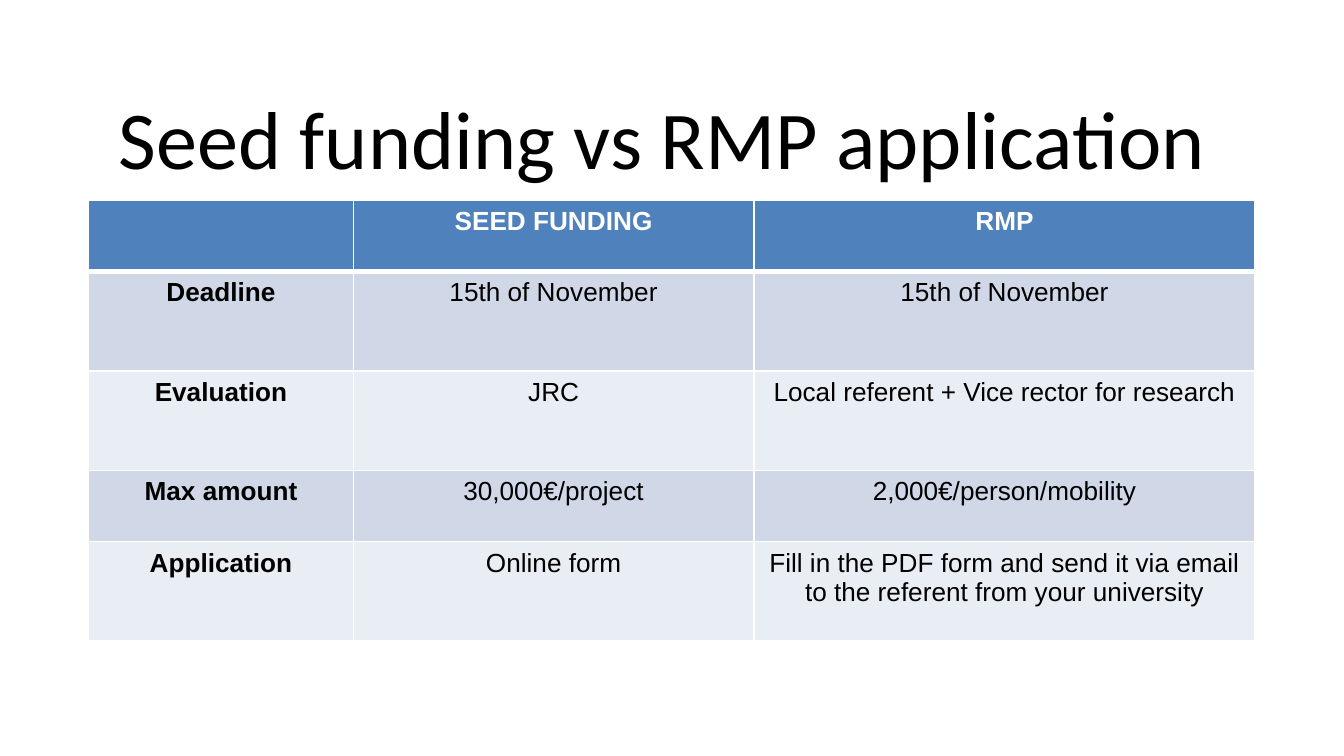
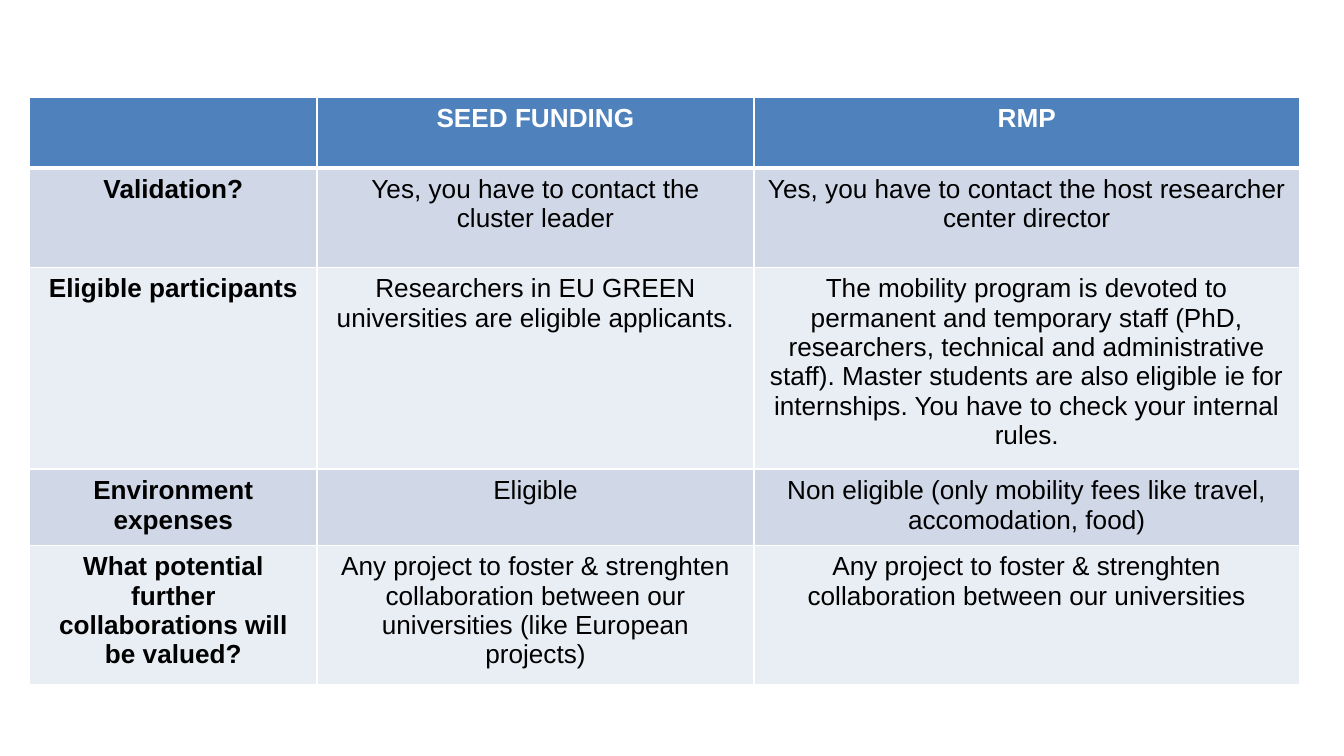
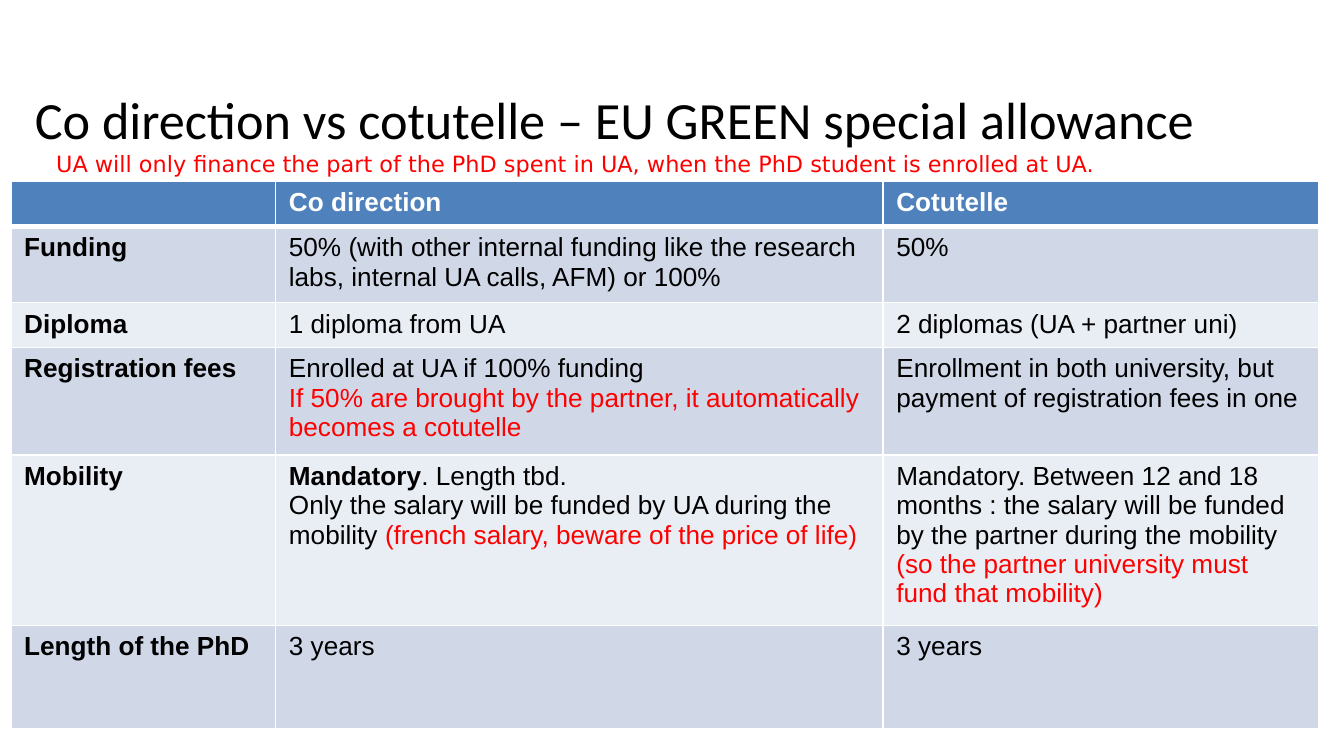
from dataclasses import dataclass
from typing import NamedTuple, Optional

from lxml.etree import SubElement
from pptx import Presentation
from pptx.dml.color import RGBColor
from pptx.enum.text import MSO_ANCHOR, PP_ALIGN
from pptx.oxml.ns import qn
from pptx.util import Emu, Pt

PX = 9144  # EMU in one px, at 100 px to the inch
PAGE_WIDTH = Emu(1000 * PX)
PAGE_HEIGHT = Emu(PAGE_WIDTH * 9 // 16)


@dataclass(frozen=True)
class Theme:
    black: str = "000000"
    white: str = "FFFFFF"
    red: str = "FF0000"
    header: str = "4F81BD"
    bands: tuple = ("D0D8E8", "E9EDF4")
    title_font: str = "Calibri"
    table_font: str = "Arial"
    note_font: str = "DejaVu Sans"
    title_size: int = 44
    small_title_size: int = 28
    table_size: int = 14
    note_size: int = 12
    rule: int = 1
    header_rule: int = 3


THEME = Theme()


class Box(NamedTuple):
    left: int
    top: int
    width: int
    height: int

    def emu(self):
        return [Emu(length * PX) for length in self]


class Span(NamedTuple):
    text: str
    color: Optional[str] = None
    bold: Optional[bool] = None


def write(frame, content, *, font, size, color=THEME.black, bold=False, align=PP_ALIGN.LEFT):
    """Content is a string, or a list of paragraphs that are strings or lists of Spans."""
    paragraphs = [content] if isinstance(content, str) else content
    for index, spans in enumerate(paragraphs):
        para = frame.add_paragraph() if index else frame.paragraphs[0]
        para.alignment = align
        para.line_spacing = 1.0
        if not spans:
            SubElement(para._p, qn("a:endParaRPr"), sz=str(size * 100))
            continue
        for span in [Span(spans)] if isinstance(spans, str) else spans:
            run = para.add_run()
            run.text = span.text
            run.font.name = font
            run.font.size = Pt(size)
            run.font.bold = bold if span.bold is None else span.bold
            run.font.color.rgb = RGBColor.from_string(span.color or color)


def add_text(page, box, content, anchor=MSO_ANCHOR.TOP, **style):
    frame = page.shapes.add_textbox(*box.emu()).text_frame
    frame.word_wrap = True
    frame.vertical_anchor = anchor
    write(frame, content, **style)


def add_title(page, box, text, size=THEME.title_size):
    add_text(page, box, text, MSO_ANCHOR.MIDDLE, font=THEME.title_font, size=size,
             align=PP_ALIGN.CENTER)


def add_borders(cell, top, bottom):
    """Border lines come before the fill in the cell properties."""
    properties = cell._tc.get_or_add_tcPr()
    widths = {"a:lnL": THEME.rule, "a:lnR": THEME.rule, "a:lnT": top, "a:lnB": bottom}
    for position, (tag, width) in enumerate(widths.items()):
        line = SubElement(properties, qn(tag), w=str(Pt(width)))
        fill = SubElement(line, qn("a:solidFill"))
        SubElement(fill, qn("a:srgbClr"), val=THEME.white)
        properties.insert(position, line)


def add_comparison(page, box, columns, heights, rows, align=PP_ALIGN.CENTER):
    """Header row, then banded rows with a bold label in the first column."""
    holder = page.shapes.add_table(len(rows), len(columns), *box.emu())
    table = holder.table
    for column, width in zip(table.columns, columns):
        column.width = Emu(width * PX)
    for row, height in zip(table.rows, heights):
        row.height = Emu(height * PX)
    holder.height = Emu(box.height * PX)

    for r, row in enumerate(rows):
        is_header = r == 0
        for c, content in enumerate(row):
            cell = table.cell(r, c)
            cell.fill.solid()
            cell.fill.fore_color.rgb = RGBColor.from_string(
                THEME.header if is_header else THEME.bands[(r - 1) % 2])
            add_borders(cell,
                        top=THEME.header_rule if r == 1 else THEME.rule,
                        bottom=THEME.header_rule if is_header else THEME.rule)
            write(cell.text_frame, content, font=THEME.table_font, size=THEME.table_size,
                  color=THEME.white if is_header else THEME.black,
                  bold=is_header or c == 0, align=align)


# Content of the three tables
FUNDING_HEADER = ("", "SEED FUNDING", "RMP")
FUNDING_HEIGHTS = (53, 74, 74, 53, 74)

APPLICATION_ROWS = [
    FUNDING_HEADER,
    ("Deadline", "15th of November", "15th of November"),
    ("Evaluation", "JRC", "Local referent + Vice rector for research"),
    ("Max amount", "30,000€/project", "2,000€/person/mobility"),
    ("Application", "Online form",
     "Fill in the PDF form and send it via email to the referent from your university"),
]

ELIGIBILITY_ROWS = [
    FUNDING_HEADER,
    ("Validation?", "Yes, you have to contact the cluster leader",
     "Yes, you have to contact the host researcher center director"),
    ("Eligible participants", "Researchers in EU GREEN universities are eligible applicants.",
     "The mobility program is devoted to permanent and temporary staff (PhD, researchers, "
     "technical and administrative staff). Master students are also eligible ie for "
     "internships. You have to check your internal rules."),
    ("Environment expenses", "Eligible",
     "Non eligible (only mobility fees like travel, accomodation, food)"),
    ("What potential further collaborations will be valued?",
     "Any project to foster & strenghten collaboration between our universities "
     "(like European projects)",
     "Any project to foster & strenghten collaboration between our universities"),
]

DOCTORATE_ROWS = [
    ("", "Co direction", "Cotutelle"),
    ("Funding",
     "50% (with other internal funding like the research labs, internal UA calls, AFM) or 100%",
     "50%"),
    ("Diploma", "1 diploma from UA", "2 diplomas (UA + partner uni)"),
    ("Registration fees",
     ["Enrolled at UA if 100% funding",
      [Span("If 50% are brought by the partner, it automatically becomes a cotutelle",
            THEME.red)]],
     "Enrollment in both university, but payment of registration fees in one"),
    ("Mobility",
     [[Span("Mandatory", bold=True), Span(". Length tbd.")],
      [Span("Only the salary will be funded by UA during the mobility "),
       Span("(french salary, beware of the price of life)", THEME.red)]],
     [[Span("Mandatory. Between 12 and 18 months : the salary will be funded by the partner "
            "during the mobility "),
       Span("(so the partner university must fund that mobility)", THEME.red)]]),
    ("Length of the PhD", "3 years", "3 years"),
]


def application_slide(page):
    add_title(page, Box(43, 55, 900, 94), "Seed funding vs RMP application")
    add_comparison(page, Box(66, 149, 868, 327), (197, 298, 373), FUNDING_HEIGHTS,
                   APPLICATION_ROWS)


def eligibility_slide(page):
    add_comparison(page, Box(22, 72, 945, 443), (214, 325, 406), FUNDING_HEIGHTS,
                   ELIGIBILITY_ROWS)


def doctorate_slide(page):
    add_title(page, Box(-27, 41, 968, 94),
              "Co direction vs cotutelle – EU GREEN special allowance",
              size=THEME.small_title_size)
    add_text(page, Box(32, 107, 900, 371),
             "UA will only finance the part of the PhD spent in UA, "
             "when the PhD student is enrolled at UA.",
             font=THEME.note_font, size=THEME.note_size, color=THEME.red)
    add_comparison(page, Box(8, 135, 972, 407), (197, 452, 324), (31, 53, 31, 75, 119, 77),
                   DOCTORATE_ROWS, align=PP_ALIGN.LEFT)


def main():
    deck = Presentation()
    deck.slide_width, deck.slide_height = PAGE_WIDTH, PAGE_HEIGHT
    blank = deck.slide_layouts[6]
    for build in (application_slide, eligibility_slide, doctorate_slide):
        build(deck.slides.add_slide(blank))
    deck.save("out.pptx")


if __name__ == "__main__":
    main()
